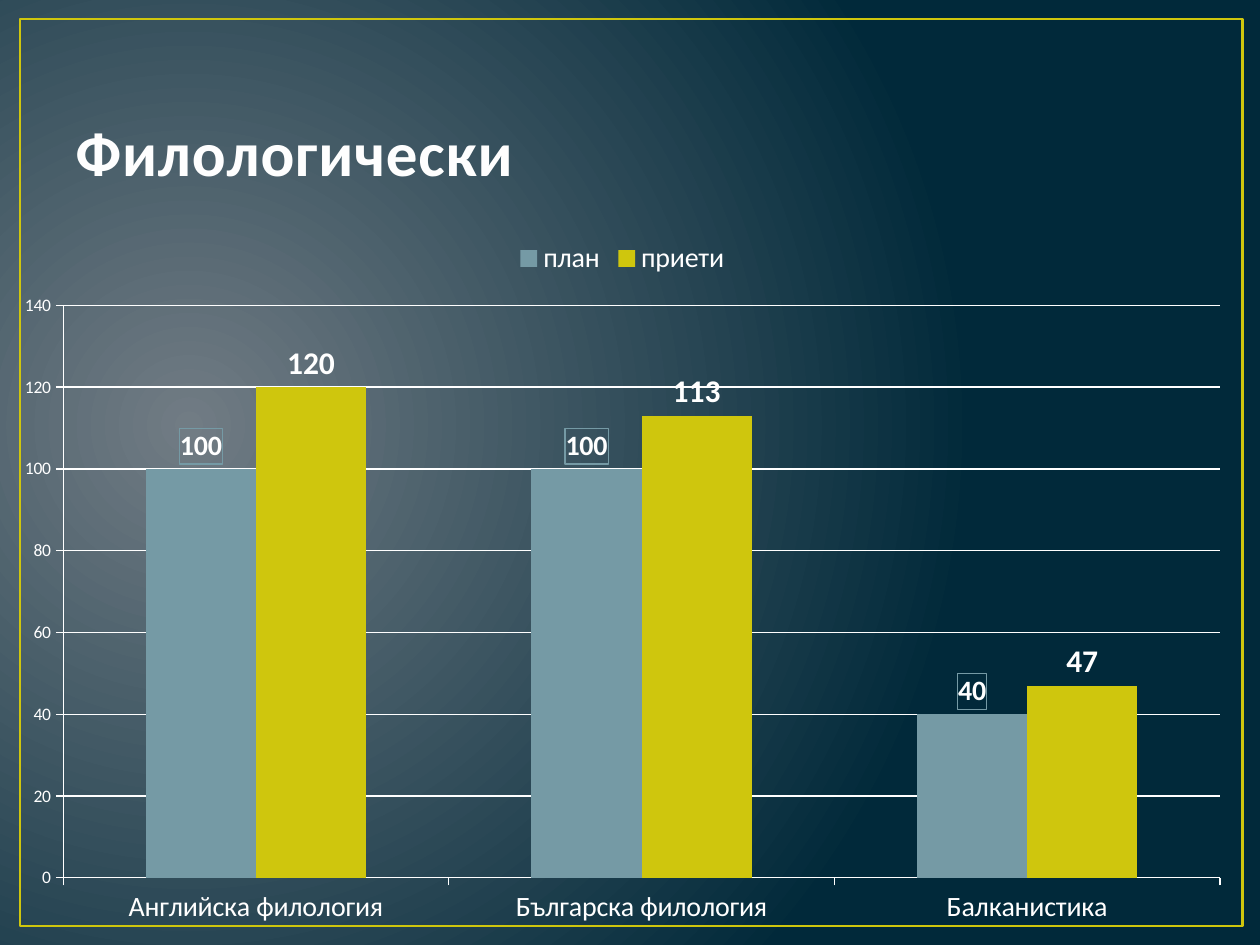
from lxml import etree
from pptx import Presentation
from pptx.chart.data import CategoryChartData
from pptx.dml.color import RGBColor
from pptx.enum.chart import XL_CHART_TYPE as ChartType
from pptx.enum.chart import XL_LABEL_POSITION as LabelPosition
from pptx.enum.chart import XL_LEGEND_POSITION as LegendPosition
from pptx.enum.chart import XL_TICK_MARK as TickMark
from pptx.enum.shapes import MSO_SHAPE as Shape
from pptx.enum.text import MSO_ANCHOR as Anchor
from pptx.enum.text import MSO_AUTO_SIZE as AutoSize
from pptx.enum.text import PP_ALIGN as Align
from pptx.oxml import parse_xml
from pptx.oxml.ns import nsdecls, qn
from pptx.util import Inches, Pt

COLORS = {
    "glow": "717C84", "night": "01293A", "yellow": "CFC60D", "blue": "759AA5",
    "title": "FEFEFE", "outline": "384F55", "white": "FFFFFF",
}


def rgb(name):
    return RGBColor.from_string(COLORS[name])


def style_text(font, text=None, size=10, color="white", bold=False, span=None):
    """Format a font; when a span is given, also set its text."""
    if span is not None:
        span.text = text
    font.name = "Calibri"
    font.size = Pt(size)
    font.bold = bold
    font.color.rgb = rgb(color)


deck = Presentation()
deck.slide_width, deck.slide_height = Inches(10), Inches(7.5)
page = deck.slides.add_slide(deck.slide_layouts[5])

# Radial background
background = page.background.fill
background.gradient()
for stop, name in zip(background.gradient_stops, ("glow", "night")):
    stop.color.rgb = rgb(name)
linear = next(page.element.iter(qn("a:lin")))
linear.getparent().replace(linear, parse_xml(
    f'<a:path {nsdecls("a")} path="circle">'
    '<a:fillToRect l="15000" t="50000" r="85000" b="60000"/></a:path>'))

# Frame, behind the title
frame = page.shapes.add_shape(
    Shape.RECTANGLE, Inches(0.16), Inches(0.15), Inches(9.7), Inches(7.2))
frame.shadow.inherit = False
frame.fill.background()
frame.line.color.rgb = rgb("yellow")
frame.line.width = Pt(1.5)
title = page.shapes.title
title.element.addprevious(frame.element)

# Title
title.left, title.top = Inches(0.5), Inches(0.3)
title.width, title.height = Inches(9), Inches(1.25)
title.text_frame.vertical_anchor = Anchor.BOTTOM
title.text_frame.auto_size = AutoSize.NONE
para = title.text_frame.paragraphs[0]
para.alignment = Align.LEFT
span = para.add_run()
style_text(span.font, "Филологически", size=36, color="title", bold=True, span=span)
properties = span.font._element
properties.set("spc", "50")
outline = etree.Element(qn("a:ln"), w=str(Pt(1.05)))
outline_fill = etree.SubElement(outline, qn("a:solidFill"))
etree.SubElement(outline_fill, qn("a:srgbClr"), val=COLORS["outline"])
properties.insert(0, outline)

# Chart
data = CategoryChartData()
data.categories = ["Английска филология", "Българска филология", "Балканистика"]
data.add_series("план", (100, 100, 40))
data.add_series("приети", (120, 113, 47))
chart = page.shapes.add_chart(
    ChartType.COLUMN_CLUSTERED, Inches(0), Inches(1.8),
    Inches(9.88), Inches(5.65), data).chart
style_text(chart.font)
chart.has_title = False
chart.has_legend = True
chart.legend.position = LegendPosition.TOP
chart.legend.include_in_layout = False
style_text(chart.legend.font, size=16)

plot = chart.plots[0]
plot.gap_width = 150
plot.overlap = 0
plot.vary_by_categories = False

for axis, size in ((chart.category_axis, 16), (chart.value_axis, 10)):
    axis.major_tick_mark = TickMark.OUTSIDE
    axis.minor_tick_mark = TickMark.NONE
    axis.format.line.color.rgb = rgb("white")
    style_text(axis.tick_labels.font, size=size)
values = chart.value_axis
values.minimum_scale, values.maximum_scale, values.major_unit = 0, 140, 20
values.has_major_gridlines = True
values.major_gridlines.format.line.color.rgb = rgb("white")

for series, color, size in zip(plot.series, ("blue", "yellow"), (16, 18)):
    series.format.fill.solid()
    series.format.fill.fore_color.rgb = rgb(color)
    labels = series.data_labels
    labels.show_value = True
    labels.position = LabelPosition.OUTSIDE_END
    style_text(labels.font, size=size, bold=True)

# Boxed labels on the plan series
label_text = plot.series[0].data_labels._element.find(qn("c:txPr"))
label_text.addprevious(parse_xml(
    f'<c:spPr {nsdecls("c", "a")}><a:noFill/><a:ln w="{Pt(0.75)}"><a:solidFill>'
    f'<a:srgbClr val="{COLORS["blue"]}"/></a:solidFill></a:ln></c:spPr>'))

deck.save("out.pptx")
